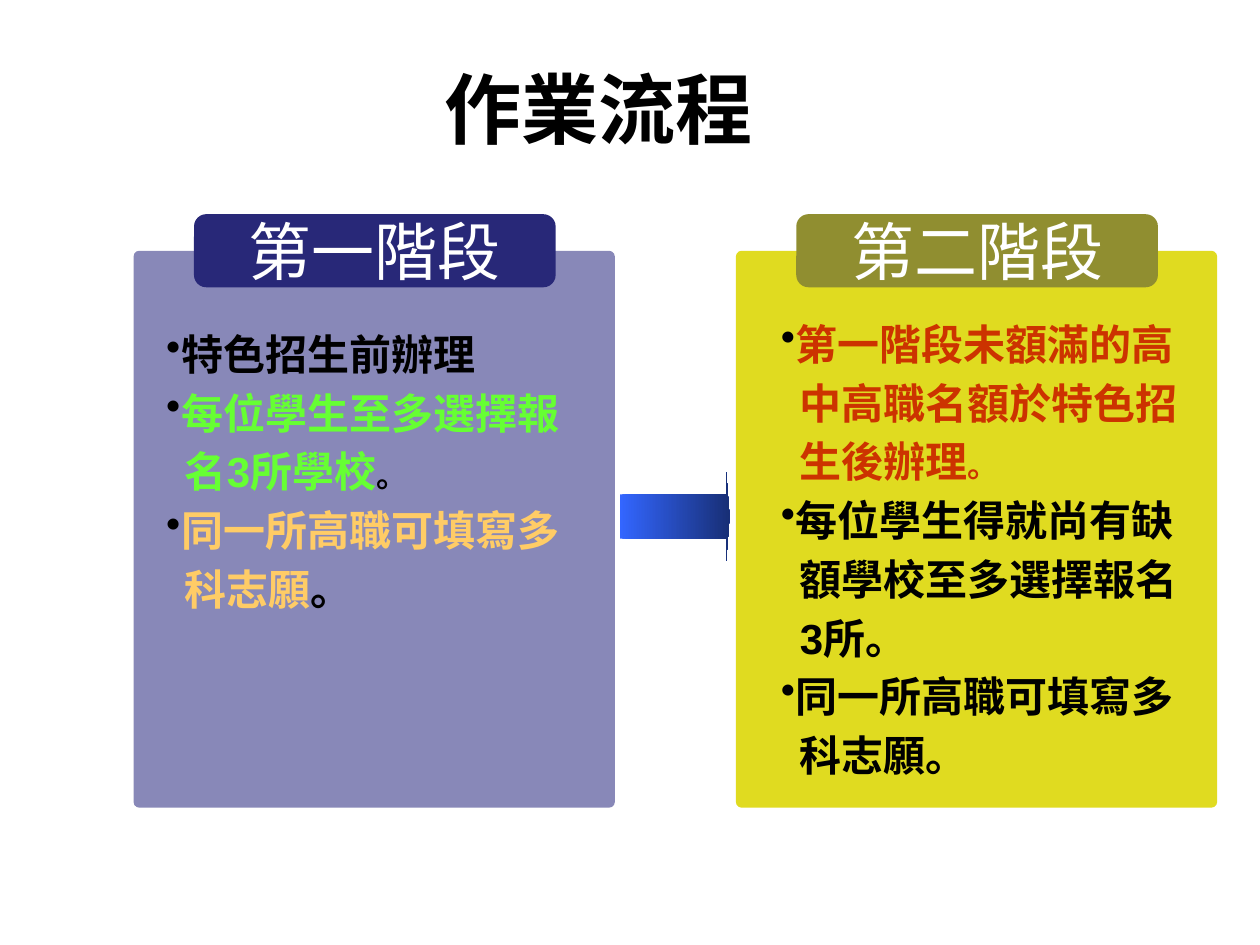
import lxml.etree
import pptx
import pptx.dml.color
import pptx.enum.shapes
import pptx.enum.text
import pptx.oxml.ns
import pptx.util

RGBColor = pptx.dml.color.RGBColor
Shape = pptx.enum.shapes.MSO_SHAPE
Align = pptx.enum.text.PP_ALIGN
Anchor = pptx.enum.text.MSO_ANCHOR

BLACK = RGBColor(0x00, 0x00, 0x00)
WHITE = RGBColor(0xFF, 0xFF, 0xFF)
LAVENDER = RGBColor(0x88, 0x88, 0xB8)
NAVY = RGBColor(0x28, 0x28, 0x78)
YELLOW = RGBColor(0xE0, 0xDB, 0x20)
OLIVE = RGBColor(0x90, 0x8E, 0x30)
GREEN = RGBColor(0x66, 0xFF, 0x33)
PEACH = RGBColor(0xFF, 0xCC, 0x66)
RED = RGBColor(0xCC, 0x33, 0x00)
BLUE = RGBColor(0x33, 0x66, 0xFF)
DARK_BLUE = RGBColor(0x18, 0x2F, 0x76)

COLUMNS, ROWS = 100, 75
FIRST_PANEL, PANEL_STEP = 10.6, 47.8


def add_span(para, text, font="Arial", size=24, color=BLACK, bold=False):
    span = para.add_run()
    span.text = text
    span.font.name = font
    span.font.size = pptx.util.Pt(size)
    span.font.color.rgb = color
    span.font.bold = bold


def add_bullet(para):
    properties = para._p.get_or_add_pPr()
    properties.set("marL", "0")
    properties.set("indent", "0")
    qn = pptx.oxml.ns.qn
    bullet_color = lxml.etree.SubElement(properties, qn("a:buClr"))
    lxml.etree.SubElement(bullet_color, qn("a:srgbClr"), val=str(BLACK))
    lxml.etree.SubElement(properties, qn("a:buSzPct"), val="101000")
    lxml.etree.SubElement(properties, qn("a:buChar"), char="•")


def indent_line(para):
    """Set a continuation line under the text of its bullet."""
    properties = para._p.get_or_add_pPr()
    properties.set("marL", str(pptx.util.Inches(0.15)))
    properties.set("indent", "0")


class StageSlide:
    """Places elements on a grid of COLUMNS by ROWS."""

    def __init__(self, deck):
        self.slide = deck.slides.add_slide(deck.slide_layouts[6])
        self.column = deck.slide_width / COLUMNS
        self.row = deck.slide_height / ROWS

    def area(self, left, top, width, height):
        return (int(left * self.column), int(top * self.row),
                int(width * self.column), int(height * self.row))

    def shape(self, kind, place, adjustments, fill=None):
        shape = self.slide.shapes.add_shape(kind, *self.area(*place))
        shape.shadow.inherit = False
        shape.line.fill.background()
        for index, value in enumerate(adjustments):
            shape.adjustments[index] = value
        if fill is not None:
            shape.fill.solid()
            shape.fill.fore_color.rgb = fill
        return shape

    def text_box(self, place):
        box = self.slide.shapes.add_textbox(*self.area(*place))
        box.text_frame.word_wrap = True
        return box.text_frame

    def title(self, text):
        frame = self.text_box((34.3, 4.4, 35.5, 8.3))
        add_span(frame.paragraphs[0], text, size=44, bold=True)

    def panel(self, left, label, panel_color, label_color):
        self.shape(Shape.ROUNDED_RECTANGLE, (left, 19.9, 38.2, 44.2), [0.012], panel_color)
        tab = self.shape(Shape.ROUNDED_RECTANGLE, (left + 4.8, 17, 28.7, 5.8),
                         [0.167], label_color)
        tab.text_frame.vertical_anchor = Anchor.MIDDLE
        para = tab.text_frame.paragraphs[0]
        para.alignment = Align.CENTER
        add_span(para, label, size=36, color=WHITE)

    def points(self, place, lines):
        """Each line is (bulleted, spans); each span is (text, format)."""
        frame = self.text_box(place)
        for index, (bulleted, spans) in enumerate(lines):
            para = frame.add_paragraph() if index else frame.paragraphs[0]
            para.line_spacing = 0.75
            para.space_before = pptx.util.Pt(12 if index else 0)
            if bulleted:
                add_bullet(para)
            else:
                indent_line(para)
            for text, style in spans:
                add_span(para, text, **{"bold": True, **style})

    def gradient_arrow(self, place, start, end):
        arrow = self.shape(Shape.RIGHT_ARROW, place, [0.5, 0.038])
        arrow.fill.gradient()
        arrow.fill.gradient_angle = 0
        for stop, position, color in zip(arrow.fill.gradient_stops, (0, 1), (start, end)):
            stop.position = position
            stop.color.rgb = color


FIRST_POINTS = [
    (True, [("特色招生前辦理", {})]),
    (True, [("每位學生至多選擇報", {"color": GREEN})]),
    (False, [("名3所學校", {"color": GREEN}), ("。", {"size": 18})]),
    (True, [("同一所高職可填寫多", {"color": PEACH})]),
    (False, [("科志願", {"color": PEACH}), ("。", {})]),
]
SECOND_POINTS = [
    (True, [("第一階段未額滿的高", {"color": RED})]),
    (False, [("中高職名額於特色招", {"color": RED})]),
    (False, [("生後辦理", {"color": RED}), ("。", {"color": RED, "size": 18})]),
    (True, [("每位學生得就尚有缺", {})]),
    (False, [("額學校至多選擇報名", {})]),
    (False, [("3所。", {})]),
    (True, [("同一所高職可填寫多", {})]),
    (False, [("科志願。", {})]),
]


def main():
    deck = pptx.Presentation()
    deck.slide_width = pptx.util.Inches(10)
    deck.slide_height = pptx.util.Inches(7.5)
    page = StageSlide(deck)
    page.title("作業流程")
    page.panel(FIRST_PANEL, "第一階段", LAVENDER, NAVY)
    page.panel(FIRST_PANEL + PANEL_STEP, "第二階段", YELLOW, OLIVE)
    page.points((12.2, 26.5, 35.4, 23), FIRST_POINTS)
    page.points((61, 25.7, 35.4, 37.3), SECOND_POINTS)
    page.gradient_arrow((49.2, 37.5, 8.7, 7), BLUE, DARK_BLUE)
    deck.save("out.pptx")


if __name__ == "__main__":
    main()
